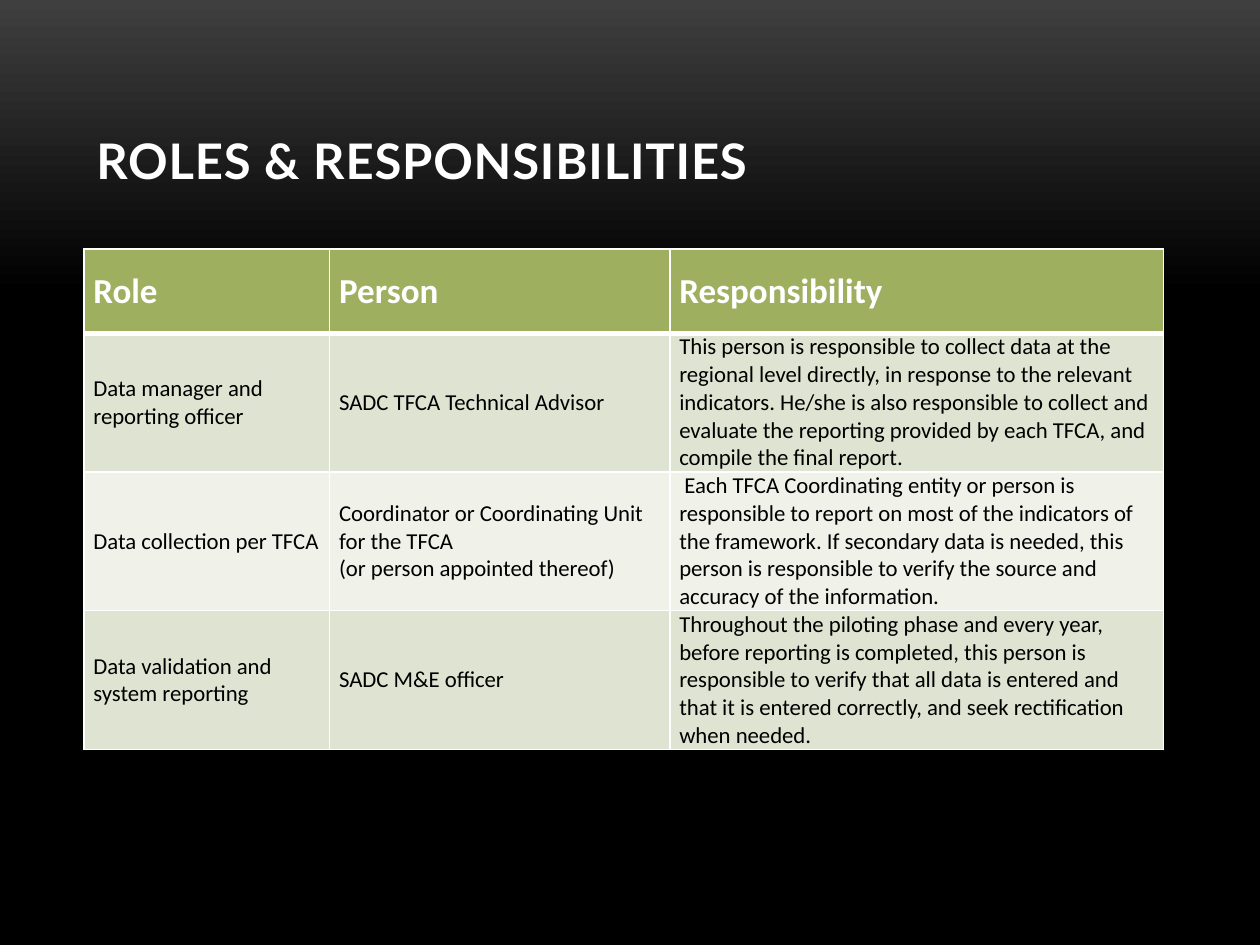
"""Build the roles and responsibilities slide."""
from lxml import etree
from pptx import Presentation
from pptx.dml.color import RGBColor
from pptx.enum.text import MSO_ANCHOR, PP_ALIGN
from pptx.oxml.ns import qn
from pptx.util import Pt

BOTTOM, MIDDLE = MSO_ANCHOR.BOTTOM, MSO_ANCHOR.MIDDLE
LEFT, JUSTIFY = PP_ALIGN.LEFT, PP_ALIGN.JUSTIFY

WHITE, BLACK, GREEN = "FFFFFF", "000000", "9EB060"
BANDS = ("DFE4D2", "F0F2EA")
BACKGROUND = ((0, "3F3F3F"), (0.31, BLACK))

TITLE = "ROLES & RESPONSIBILITIES"
ROWS = [
    ("Role", "Person", "Responsibility"),
    (
        "Data manager and reporting officer",
        "SADC TFCA Technical Advisor",
        "This person is responsible to collect data at the regional level directly, "
        "in response to the relevant indicators. He/she is also responsible to collect "
        "and evaluate the reporting provided by each TFCA, and compile the final report.",
    ),
    (
        "Data collection per TFCA",
        "Coordinator or Coordinating Unit for the TFCA\n(or person appointed thereof)",
        " Each TFCA Coordinating entity or person is responsible to report on most of "
        "the indicators of the framework. If secondary data is needed, this person is "
        "responsible to verify the source and accuracy of the information.",
    ),
    (
        "Data validation and system reporting",
        "SADC M&E officer",
        "Throughout the piloting phase and every year, before reporting is completed, "
        "this person is responsible to verify that all data is entered and that it is "
        "entered correctly, and seek rectification when needed.",
    ),
]
TITLE_BOX = (48, 21.6, 624, 90)
TABLE_LEFT, TABLE_TOP = 48, 142.4
COLUMN_WIDTHS = (140.4, 194.4, 282.2)
HEADER_HEIGHT, ROW_HEIGHT = 48, 79.3


def color(value):
    return RGBColor.from_string(value)


def write_text(frame, text, font="Calibri", size=13, fill=BLACK, bold=False,
               align=LEFT, spacing=0):
    for index, line in enumerate(text.split("\n")):
        paragraph = frame.add_paragraph() if index else frame.paragraphs[0]
        paragraph.alignment = align
        run = paragraph.add_run()
        run.text = line
        run.font.name, run.font.size, run.font.bold = font, Pt(size), bold
        run.font.color.rgb = color(fill)
        if spacing:
            run.font._element.set("spc", str(int(spacing * 100)))


def set_borders(cell, **widths):
    properties = cell._tc.get_or_add_tcPr()
    for side in "LRTB":
        width = widths.get(side, 1)
        line = etree.SubElement(properties, qn(f"a:ln{side}"), w=str(Pt(width)))
        solid = etree.SubElement(line, qn("a:solidFill"))
        etree.SubElement(solid, qn("a:srgbClr"), val=WHITE)


def set_background(slide):
    fill = slide.background.fill
    fill.gradient()
    fill.gradient_angle = 270
    for stop, (position, value) in zip(fill.gradient_stops, BACKGROUND):
        stop.position = position
        stop.color.rgb = color(value)


def add_title(slide):
    frame = slide.shapes.add_textbox(*map(Pt, TITLE_BOX)).text_frame
    frame.word_wrap = True
    frame.vertical_anchor = BOTTOM
    write_text(frame, TITLE, font="Lato", size=28, fill=WHITE, bold=True, spacing=0.5)


def add_roles_table(slide):
    heights = [HEADER_HEIGHT] + [ROW_HEIGHT] * (len(ROWS) - 1)
    table = slide.shapes.add_table(
        len(ROWS), len(COLUMN_WIDTHS), Pt(TABLE_LEFT), Pt(TABLE_TOP),
        Pt(sum(COLUMN_WIDTHS)), Pt(sum(heights))).table
    for column, width in zip(table.columns, COLUMN_WIDTHS):
        column.width = Pt(width)
    for row_index, (texts, height) in enumerate(zip(ROWS, heights)):
        header = row_index == 0
        table.rows[row_index].height = Pt(height)
        for column_index, text in enumerate(texts):
            cell = table.cell(row_index, column_index)
            cell.vertical_anchor = MIDDLE
            cell.margin_left = cell.margin_right = Pt(5.4)
            cell.margin_top = cell.margin_bottom = 0
            set_borders(cell, B=3 if header else 1, T=3 if row_index == 1 else 1)
            cell.fill.solid()
            band = BANDS[(row_index - 1) % len(BANDS)]
            cell.fill.fore_color.rgb = color(GREEN if header else band)
            style = dict(size=20, fill=WHITE, bold=True, align=JUSTIFY) if header else {}
            write_text(cell.text_frame, text, **style)


def main():
    presentation = Presentation()
    presentation.slide_width, presentation.slide_height = Pt(720), Pt(540)
    slide = presentation.slides.add_slide(presentation.slide_layouts[6])
    set_background(slide)
    add_title(slide)
    add_roles_table(slide)
    presentation.save("out.pptx")


if __name__ == "__main__":
    main()
